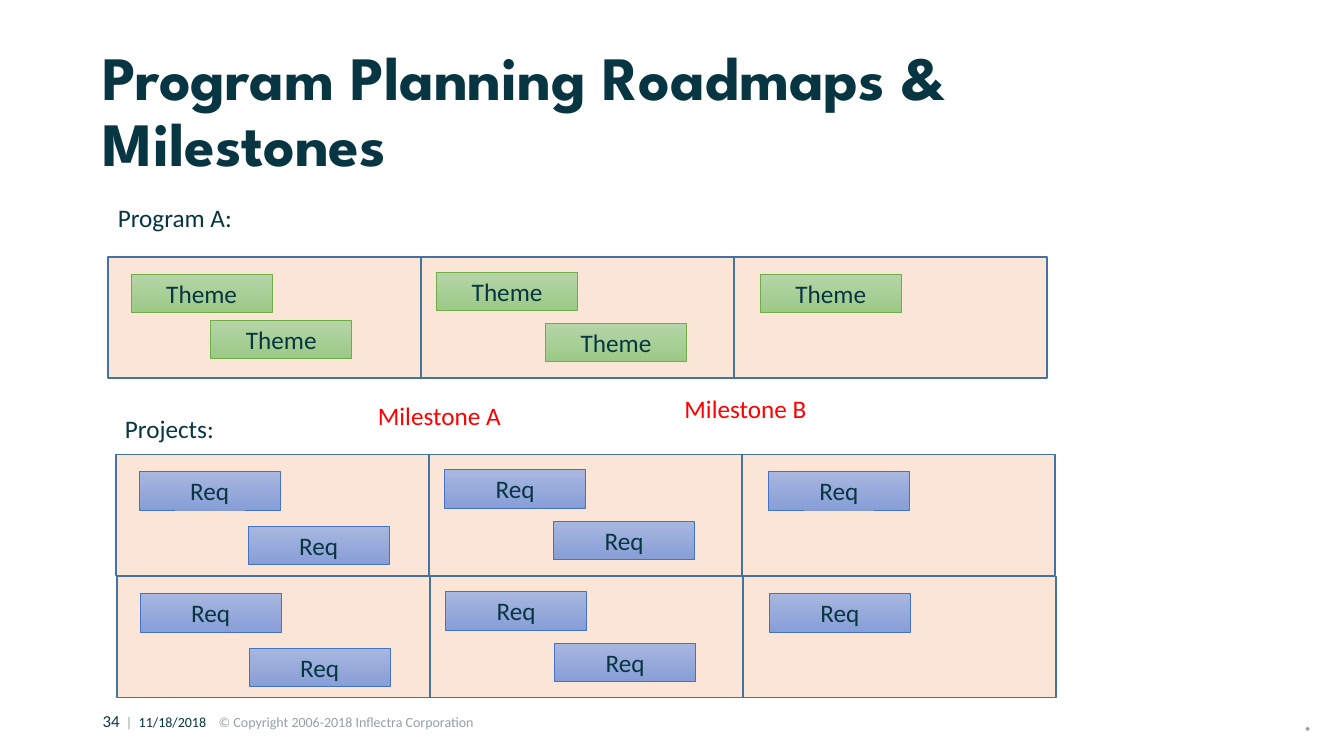
from dataclasses import dataclass

from pptx import Presentation
from pptx.dml.color import RGBColor
from pptx.enum.shapes import MSO_SHAPE
from pptx.enum.text import MSO_ANCHOR, MSO_AUTO_SIZE, PP_ALIGN
from pptx.util import Inches, Pt


@dataclass(frozen=True)
class Theme:
    ink: str = "073642"
    muted: str = "93A1A1"
    milestone: str = "FF0000"
    lane_fill: str = "FBE5D6"
    lane_line: str = "43739E"
    green: tuple = ("B5D5A7", "9CC987", "70AD47")
    blue: tuple = ("A8B7DF", "889ED7", "4472C4")
    body_font: str = "Calibri"
    title_font: str = "League Spartan"
    title_size: int = 44
    body_size: int = 18
    mark_size: int = 14
    number_size: int = 12
    footer_size: int = 10


THEME = Theme()

TITLE = "Program Planning Roadmaps & Milestones"
LABELS = [
    ("Program A:", 1.07, 1.96, 2.31, THEME.ink, True),
    ("Milestone A", 3.65, 3.92, 1.58, THEME.milestone, False),
    ("Milestone B", 6.69, 3.85, 1.58, THEME.milestone, False),
    ("Projects:", 1.14, 4.05, 2.31, THEME.ink, True),
]
LANES = [
    ("Theme", 1.07, 2.55, THEME.green, (1.02, 0.63)),
    ("Req", 1.15, 4.51, THEME.blue, (1.31, 0.71)),
    ("Req", 1.16, 5.72, THEME.blue, (1.31, 0.71)),
]
SHARED_CARD_OFFSETS = [(0.23, 0.17), (3.26, 0.15), (4.34, 0.66), (6.47, 0.17)]
FOOTER = [
    ("34", THEME.number_size, THEME.ink),
    ("  |  ", THEME.footer_size, THEME.muted),
    ("11/18/2018  ", THEME.footer_size, THEME.ink),
    ("  © Copyright 2006-2018 Inflectra Corporation", THEME.footer_size, THEME.muted),
]

PERIODS = 3
PERIOD_PITCH = 3.105
LANE_HEIGHT = 1.2
CARD_WIDTH, CARD_HEIGHT = 1.4, 0.38


def color(value):
    return RGBColor.from_string(value)


def add_run(paragraph, text, size, ink, font=THEME.body_font, bold=False):
    run = paragraph.add_run()
    run.text = text
    run.font.name = font
    run.font.size = Pt(size)
    run.font.bold = bold
    run.font.color.rgb = color(ink)
    return run


def add_text(slide, left, top, width, height, wrap=True):
    frame = slide.shapes.add_textbox(
        Inches(left), Inches(top), Inches(width), Inches(height)
    ).text_frame
    frame.word_wrap = wrap
    frame.auto_size = MSO_AUTO_SIZE.SHAPE_TO_FIT_TEXT
    return frame


def add_box(slide, left, top, width, height, line, line_width):
    shape = slide.shapes.add_shape(
        MSO_SHAPE.RECTANGLE, Inches(left), Inches(top), Inches(width), Inches(height)
    )
    shape.shadow.inherit = False
    shape.line.color.rgb = color(line)
    shape.line.width = Pt(line_width)
    return shape


def add_card(slide, text, left, top, palette):
    light, dark, line = palette
    card = add_box(slide, left, top, CARD_WIDTH, CARD_HEIGHT, line, 0.5)
    card.fill.gradient()
    card.fill.gradient_angle = 270
    for stop, shade in zip(card.fill.gradient_stops, (light, dark)):
        stop.color.rgb = color(shade)
    card.text_frame.vertical_anchor = MSO_ANCHOR.MIDDLE
    paragraph = card.text_frame.paragraphs[0]
    paragraph.alignment = PP_ALIGN.CENTER
    add_run(paragraph, text, THEME.body_size, THEME.ink)


def add_lane(slide, text, left, top, palette, second_card):
    for period in range(PERIODS):
        box = add_box(slide, left + period * PERIOD_PITCH, top,
                      PERIOD_PITCH, LANE_HEIGHT, THEME.lane_line, 1)
        box.fill.solid()
        box.fill.fore_color.rgb = color(THEME.lane_fill)
    first_card, *later_cards = SHARED_CARD_OFFSETS
    for across, down in (first_card, second_card, *later_cards):
        add_card(slide, text, left + across, top + down, palette)


def add_title(slide):
    frame = add_text(slide, 0.92, 0.4, 11.5, 1.45)
    frame.auto_size = MSO_AUTO_SIZE.NONE
    frame.vertical_anchor = MSO_ANCHOR.MIDDLE
    paragraph = frame.paragraphs[0]
    paragraph.line_spacing = 0.9
    add_run(paragraph, TITLE, THEME.title_size, THEME.ink, THEME.title_font, True)


def add_footer(slide):
    paragraph = add_text(slide, 0.92, 7, 7.47, 0.3).paragraphs[0]
    for text, size, ink in FOOTER:
        add_run(paragraph, text, size, ink)
    mark = add_text(slide, 12.95, 7.16, 0.18, 0.24)
    mark.margin_left = mark.margin_right = mark.margin_top = mark.margin_bottom = 0
    run = add_run(mark.paragraphs[0], "®", THEME.mark_size, THEME.ink)
    run.font._element.set("baseline", "30000")


def main():
    presentation = Presentation()
    presentation.slide_width = Inches(13.33)
    presentation.slide_height = Inches(7.5)
    slide = presentation.slides.add_slide(presentation.slide_layouts[6])
    add_footer(slide)
    add_title(slide)
    for lane in LANES:
        add_lane(slide, *lane)
    for text, left, top, width, ink, wrap in LABELS:
        frame = add_text(slide, left, top, width, 0.4, wrap)
        add_run(frame.paragraphs[0], text, THEME.body_size, ink)
    presentation.save("out.pptx")


if __name__ == "__main__":
    main()
